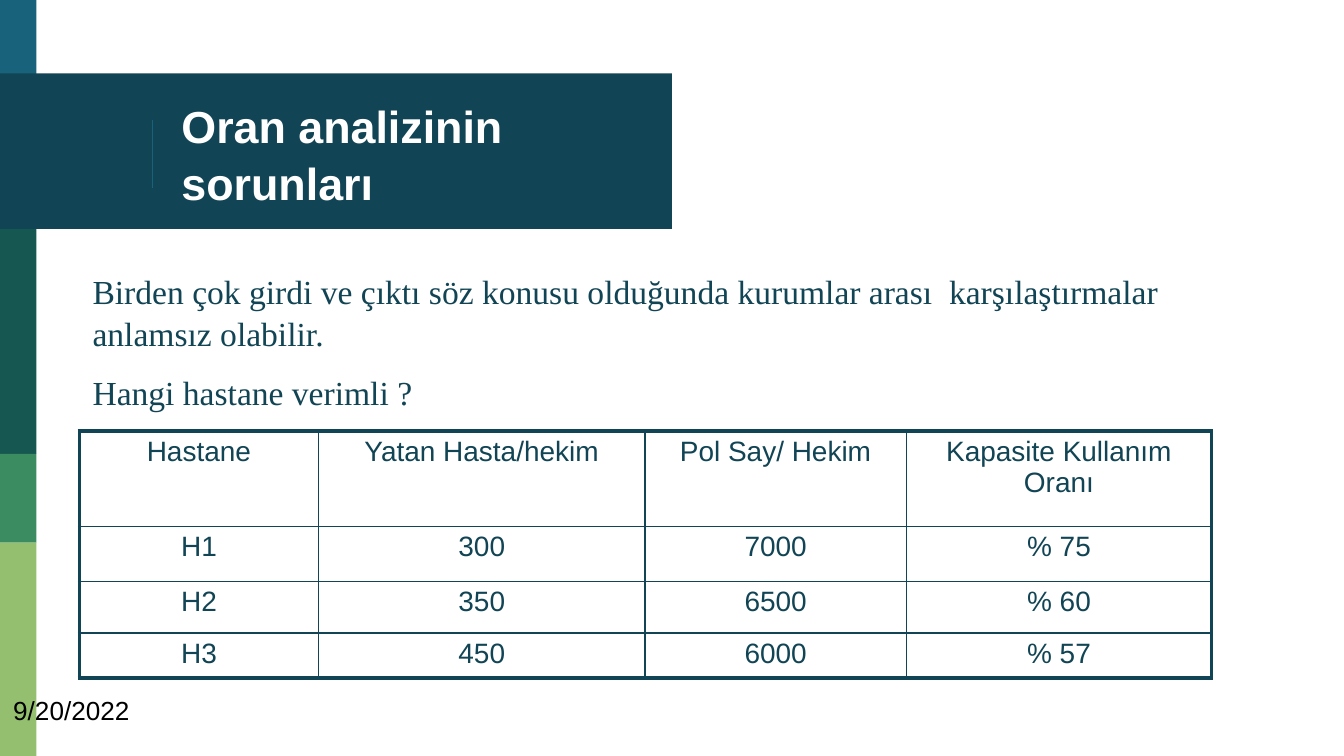
import pptx
import pptx.dml.color
import pptx.enum.shapes
import pptx.enum.text
import pptx.oxml
import pptx.util
from lxml import etree

Cm = pptx.util.Cm
Pt = pptx.util.Pt
RGBColor = pptx.dml.color.RGBColor
PP_ALIGN = pptx.enum.text.PP_ALIGN
MSO_ANCHOR = pptx.enum.text.MSO_ANCHOR

NAVY = RGBColor(0x11, 0x44, 0x54)
BLUE = RGBColor(0x18, 0x63, 0x7B)
TEAL = RGBColor(0x16, 0x57, 0x51)
GREEN = RGBColor(0x3B, 0x8D, 0x61)
LIME = RGBColor(0x94, 0xBF, 0x6E)
WHITE = RGBColor(0xFF, 0xFF, 0xFF)
BLACK = RGBColor(0x00, 0x00, 0x00)
NS = "http://schemas.openxmlformats.org/drawingml/2006/main"


def add_run(p, text, size, color, font="Arial", bold=False):
    r = p.add_run()
    r.text = text
    r.font.size = Pt(size)
    r.font.name = font
    r.font.bold = bold
    r.font.color.rgb = color


def add_box(left, top, width, height):
    sp = s.shapes.add_textbox(Cm(left), Cm(top), Cm(width), Cm(height))
    sp.text_frame.word_wrap = True
    return sp.text_frame


prs = pptx.Presentation()
prs.slide_width = Cm(25.4)
prs.slide_height = Cm(14.29)
s = prs.slides.add_slide(prs.slide_layouts[6])

for top, width, height, color in [
    (0, 0.69, 1.47, BLUE),
    (1.39, 12.7, 2.94, NAVY),
    (4.33, 0.69, 4.25, TEAL),
    (8.58, 0.69, 1.68, GREEN),
    (10.26, 0.69, 4.03, LIME),
]:
    sp = s.shapes.add_shape(
        pptx.enum.shapes.MSO_SHAPE.RECTANGLE, 0, Cm(top), Cm(width), Cm(height)
    )
    sp.shadow.inherit = False
    sp.fill.solid()
    sp.fill.fore_color.rgb = color
    sp.line.fill.background()

rule = s.shapes.add_connector(
    pptx.enum.shapes.MSO_CONNECTOR.STRAIGHT, Cm(2.88), Cm(2.26), Cm(2.88), Cm(3.56)
)
rule.line.color.rgb = BLUE
rule.line.width = Pt(0.75)
etree.SubElement(rule._element.spPr, f"{{{NS}}}effectLst")

tf = add_box(3.18, 1.47, 8.92, 2.84)
tf.vertical_anchor = MSO_ANCHOR.MIDDLE
p = tf.paragraphs[0]
p.line_spacing = 1.05
add_run(p, "Oran analizinin sorunları", 24, WHITE, bold=True)

tf = add_box(0, 13, 5.92, 0.97)
add_run(tf.paragraphs[0], "9/20/2022", 14, BLACK)

rows = [
    ["Hastane", "Yatan Hasta/hekim", "Pol Say/ Hekim", "Kapasite Kullanım Oranı"],
    ["H1", "300", "7000", "% 75"],
    ["H2", "350", "6500", "% 60"],
    ["H3", "450", "6000", "% 57"],
]
col_widths = [4.52, 6.17, 4.94, 5.77]
row_heights = [1.8, 1.04, 0.97, 0.86]
last_row, last_col = len(rows) - 1, len(col_widths) - 1
table = s.shapes.add_table(
    len(rows), len(col_widths), Cm(1.5), Cm(8.15),
    Cm(sum(col_widths)), Cm(sum(row_heights)),
).table
table.first_row = False
table.horz_banding = False
for column, width in zip(table.columns, col_widths):
    column.width = Cm(width)
for row, height in zip(table.rows, row_heights):
    row.height = Cm(height)

for i, texts in enumerate(rows):
    for j, text in enumerate(texts):
        cell = table.cell(i, j)
        cell.margin_left = cell.margin_right = Cm(0.25)
        cell.margin_top = cell.margin_bottom = Cm(0.1)
        cell.fill.background()
        p = cell.text_frame.paragraphs[0]
        p.alignment = PP_ALIGN.CENTER
        add_run(p, text, 15, NAVY)
        tcPr = cell._tc.get_or_add_tcPr()
        outer_edges = [("L", j == 0), ("R", j == last_col), ("T", i == 0), ("B", i == last_row)]
        for k, (side, outer) in enumerate(outer_edges):
            width = Pt(2.25 if outer else 1)
            tcPr.insert(k, pptx.oxml.parse_xml(
                f'<a:ln{side} xmlns:a="{NS}" w="{width}"><a:solidFill>'
                f'<a:srgbClr val="{NAVY}"/></a:solidFill></a:ln{side}>'
            ))

tf = add_box(1.5, 4.95, 22.2, 2.95)
for i, text in enumerate([
    "Birden çok girdi ve çıktı söz konusu olduğunda kurumlar arası  karşılaştırmalar anlamsız olabilir.",
    "Hangi hastane verimli ?",
]):
    p = tf.add_paragraph() if i else tf.paragraphs[0]
    p.space_before = Pt(9 if i else 0)
    p.line_spacing = 1.05
    add_run(p, text, 18, NAVY, "Times New Roman")

prs.save("out.pptx")
